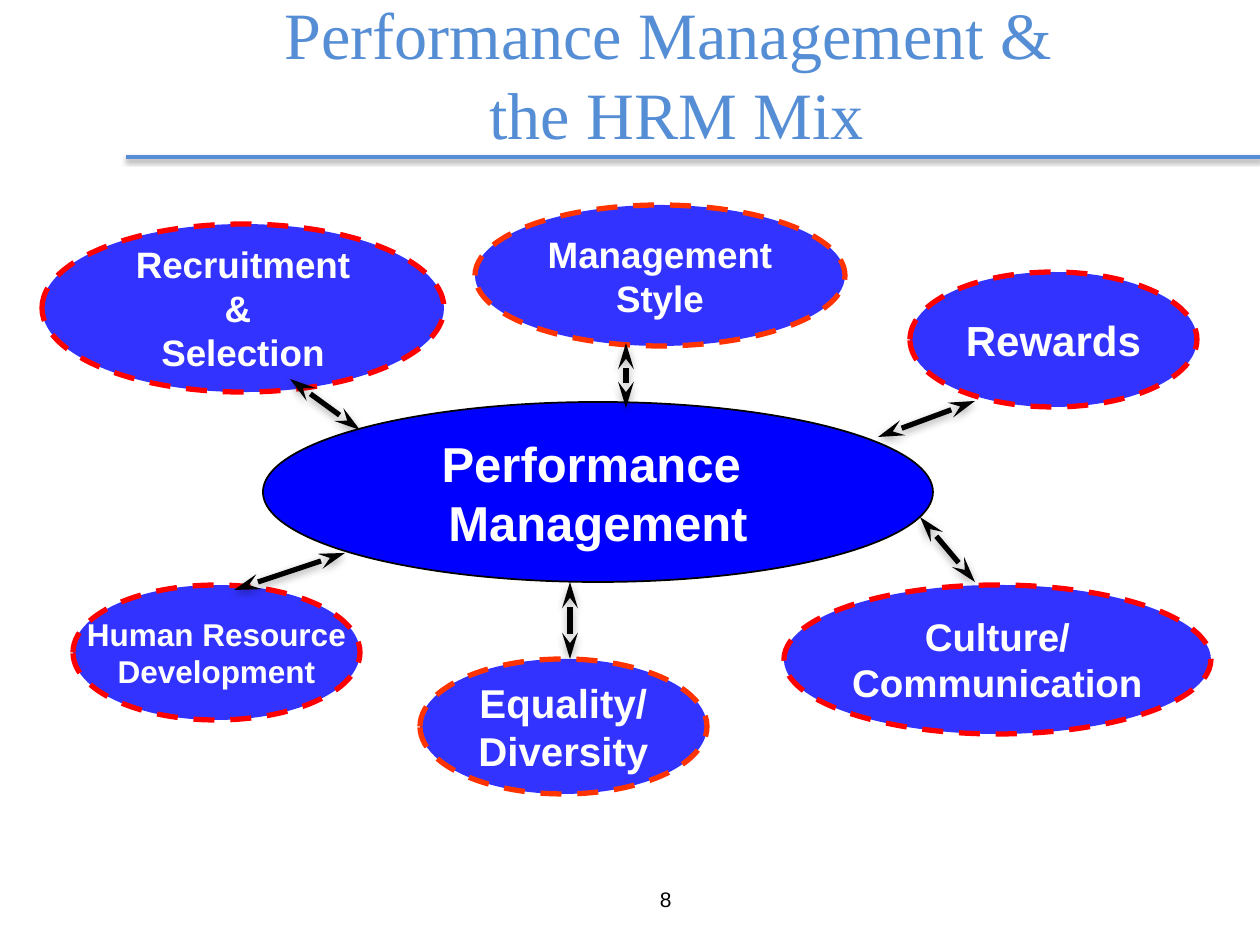
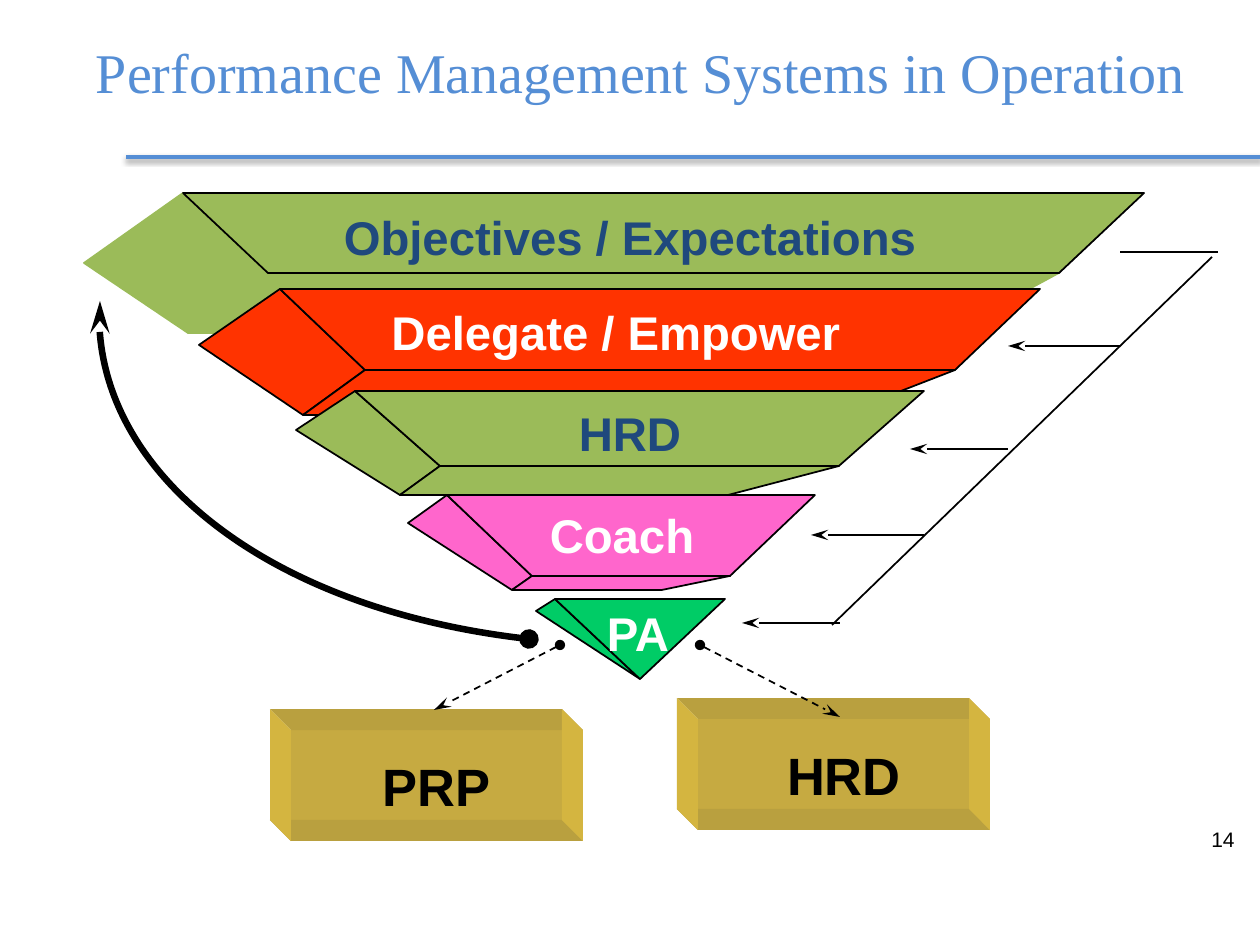
from pptx import Presentation
from pptx.dml.color import RGBColor
from pptx.enum.dml import MSO_LINE_DASH_STYLE as DASH
from pptx.enum.shapes import MSO_CONNECTOR, MSO_SHAPE
from pptx.enum.text import MSO_ANCHOR, PP_ALIGN
from pptx.oxml.ns import qn
from pptx.util import Pt
from lxml.etree import SubElement

SCALE = 914400 / 126
TITLE_BLUE = "558ED5"
BLACK, WHITE, NAVY = "000000", "FFFFFF", "1F497D"
OLIVE, ORANGE, PINK, MINT = "9BBB59", "FF3300", "FF66CC", "00CC66"
RED, BRIGHT_BLUE, SOFT_BLUE = "FF0000", "0000FF", "3333FF"
GOLD_FRONT, GOLD_DARK, GOLD_LIGHT = "C6AA41", "B9A03F", "D4B540"
RULE_SHADOW = (3.1, 1.6, 38)
ARROW_SHADOW = (5, 1.8, 35)
END_LENGTHS = {"stealth": "lg", "oval": "med"}


def px(length):
    """Turn px into EMU."""
    return round(length * SCALE)


def color(hex_code):
    """Turn a hex string into a colour."""
    return RGBColor.from_string(hex_code)


def paint(shape, fill=None, line=None, width=1, dash=None):
    """Set the fill and outline of a shape without shadow."""
    shape.shadow.inherit = False
    if fill:
        shape.fill.solid()
        shape.fill.fore_color.rgb = color(fill)
    else:
        shape.fill.background()
    if line:
        shape.line.color.rgb = color(line)
        shape.line.width = Pt(width)
        if dash:
            shape.line.dash_style = dash
    else:
        shape.line.fill.background()


def write(shape, text, size, ink, bold=True, font="Arial", align=PP_ALIGN.CENTER, wrap=False):
    """Put formatted text in the middle of a shape."""
    frame = shape.text_frame
    frame.text = text
    frame.word_wrap = wrap
    frame.vertical_anchor = MSO_ANCHOR.MIDDLE
    for paragraph in frame.paragraphs:
        paragraph.alignment = align
        for run in paragraph.runs:
            run.font.name = font
            run.font.size = Pt(size)
            run.font.bold = bold
            run.font.color.rgb = color(ink)


def add_text(slide, box, text, size, ink, **style):
    """Add a text box."""
    write(slide.shapes.add_textbox(*map(px, box)), text, size, ink, **style)


def add_ends(shape, head, tail):
    """Add line ends to an outline."""
    outline = shape._element.spPr.find(qn("a:ln"))
    for tag, kind in (("a:headEnd", head), ("a:tailEnd", tail)):
        if kind:
            SubElement(outline, qn(tag), type=kind, w="med", len=END_LENGTHS[kind])


def add_line(slide, start, end, ink=BLACK, width=1, head=None, tail=None, dash=None, shadow=None):
    """Add a straight line with optional ends and shadow."""
    connector = slide.shapes.add_connector(MSO_CONNECTOR.STRAIGHT, *map(px, (*start, *end)))
    connector.line.color.rgb = color(ink)
    connector.line.width = Pt(width)
    if dash:
        connector.line.dash_style = dash
    add_ends(connector, head, tail)
    effects = SubElement(connector._element.spPr, qn("a:effectLst"))
    if shadow:
        blur, distance, opacity = shadow
        outer = SubElement(effects, qn("a:outerShdw"), blurRad=str(Pt(blur)),
                           dist=str(Pt(distance)), dir="5400000", rotWithShape="0")
        shade = SubElement(outer, qn("a:srgbClr"), val=BLACK)
        SubElement(shade, qn("a:alpha"), val=str(opacity * 1000))


def add_outline(slide, left, top, points, close=True):
    """Build a freeform from points relative to left and top."""
    points = [(left + x, top + y) for x, y in points]
    builder = slide.shapes.build_freeform(*points[0], scale=SCALE)
    builder.add_line_segments(points[1:], close=close)
    return builder.convert_to_shape()


def add_frame(slide, title, title_box, title_size, number, number_box):
    """Add the title, the rule under it and the slide number."""
    add_line(slide, (126, 157), (1260, 157), TITLE_BLUE, 2, shadow=RULE_SHADOW)
    add_text(slide, title_box, title, title_size, TITLE_BLUE, bold=False,
             font="Times New Roman", wrap=True)
    add_text(slide, number_box, number, 12, BLACK, bold=False, align=PP_ALIGN.RIGHT, wrap=True)


def add_ellipse(slide, box, text, size, fill, **outline):
    """Add a labelled ellipse."""
    ellipse = slide.shapes.add_shape(MSO_SHAPE.OVAL, *map(px, box))
    paint(ellipse, fill, **outline)
    write(ellipse, text, size, WHITE)


def add_hrm_mix(slide, left, top):
    """Draw the central ellipse, its six neighbours and the arrows."""
    add_ellipse(slide, (left + 223, top + 202, 670, 180), "Performance \nManagement", 28,
                BRIGHT_BLUE, line=BLACK)
    neighbours = [
        (2, 24, 402, 168, "Recruitment\n& \nSelection", 21, RED),
        (744, 385, 427, 149, "Culture/\nCommunication", 22, RED),
        (435, 5, 370, 141, "Management\nStyle", 21, ORANGE),
        (870, 72, 287, 135, "Rewards", 24, RED),
        (33, 385, 287, 135, "Human Resource\nDevelopment", 18, RED),
        (380, 459, 287, 135, "Equality/\nDiversity", 23, ORANGE),
    ]
    for x, y, width, height, text, size, border in neighbours:
        add_ellipse(slide, (left + x, top + y, width, height), text, size, SOFT_BLUE,
                    line=border, width=3, dash=DASH.DASH)
    arrows = [
        (320, 230, 250, 179), (194, 390, 305, 353), (586, 208, 586, 143),
        (935, 201, 838, 237), (935, 382, 880, 317), (530, 382, 530, 459),
    ]
    for x1, y1, x2, y2 in arrows:
        add_line(slide, (left + x1, top + y1), (left + x2, top + y2), width=3,
                 head="stealth", tail="stealth", shadow=ARROW_SHADOW)


def add_tier(slide, left, top, front, tip, foot, fill, edge):
    """Draw one funnel tier: side face, under face and front face."""
    x1, x2, y1, y2 = front
    inset, foot_shift = 85, 104
    foot_right, foot_y = foot
    top_left, top_right = (x1, y1), (x2, y1)
    low_left, low_right = (x1 + inset, y2), (x2 - inset, y2)
    foot_left = (tip[0] + foot_shift, foot_y)
    faces = [([top_left, low_left, foot_left, tip], edge)]
    if foot_right > foot_left[0]:
        faces.append(([low_right, low_left, foot_left, foot], edge))
    faces.append(([top_left, top_right, low_right, low_left], BLACK))
    for points, line in faces:
        paint(add_outline(slide, left, top, points), fill, line)


def add_funnel(slide, left, top):
    """Draw the five tiers and then their labels."""
    tiers = [
        ((99, 1060, 0, 80), (0, 70), (864, 140), OLIVE, OLIVE),
        ((196, 956, 96, 177), (115, 152), (755, 222), ORANGE, BLACK),
        ((271, 840, 198, 273), (212, 237), (644, 302), OLIVE, BLACK),
        ((363, 731, 302, 383), (324, 330), (578, 397), PINK, BLACK),
        ((471, 641, 406, 486), (452, 418), (556, 486), MINT, BLACK),
    ]
    for tier in tiers:
        add_tier(slide, left, top, *tier)
    labels = [
        ("Objectives / Expectations", 546, 44, 660, NAVY),
        ("Delegate / Empower", 532, 139, 540, WHITE),
        ("HRD", 546, 240, 224, NAVY),
        ("Coach", 538, 342, 220, WHITE),
        ("PA", 554, 440, 120, WHITE),
    ]
    height = 60
    for text, center, middle, width, ink in labels:
        box = (left + center - width / 2, top + middle - height / 2, width, height)
        add_text(slide, box, text, 27, ink)


def add_feedback_curve(slide, left, top):
    """Draw the thick curved arrow from the bottom tier back to the top."""
    curve = add_outline(slide, left, top, [(443, 338), (190, 310), (0, 161), (14, 0)], close=False)
    paint(curve, line=BLACK, width=3.75)
    add_ends(curve, "oval", "stealth")
    segments = list(curve._element.iter(qn("a:lnTo")))
    bezier = SubElement(segments[0].getparent(), qn("a:cubicBezTo"))
    for segment in segments:
        bezier.append(segment[0])
        segment.getparent().remove(segment)


def add_cascade(slide, left, top):
    """Draw the slanted line with an arrow to each lower tier."""
    add_line(slide, (left + 470, top + 5), (left + 90, top + 373))
    add_line(slide, (left + 476, top), (left + 378, top))
    for start, end, y in ((378, 266, 94), (266, 168, 197), (182, 69, 283), (98, 0, 371)):
        add_line(slide, (left + start, top + y), (left + end, top + y), tail="stealth")


def add_block(slide, left, top, text):
    """Draw a gold block with four slanted faces and a label."""
    width, height, depth = 292, 111, 21
    front = slide.shapes.add_shape(MSO_SHAPE.RECTANGLE, *map(px, (left, top, width, height)))
    paint(front, GOLD_FRONT)
    write(front, text, 30, BLACK)
    for y in (0, height):
        face = [(0, y), (width, y), (width - depth, y - depth), (-depth, y - depth)]
        paint(add_outline(slide, left, top, face), GOLD_DARK)
    for x in (0, width):
        face = [(x, 0), (x, height), (x - depth, height - depth), (x - depth, -depth)]
        paint(add_outline(slide, left, top, face), GOLD_LIGHT)


def add_outcomes(slide, left, top):
    """Draw the two outcome blocks and the dashed arrows to them."""
    add_block(slide, left + 429, top + 74, "HRD")
    add_block(slide, left + 22, top + 85, "PRP")
    for start, end in (((431, 0), (571, 72)), ((291, 0), (165, 65))):
        add_line(slide, (left + start[0], top + start[1]), (left + end[0], top + end[1]),
                 head="oval", tail="stealth", dash=DASH.DASH)


def main():
    """Build both slides and save them."""
    presentation = Presentation()
    presentation.slide_width, presentation.slide_height = px(1260), px(945)
    blank = presentation.slide_layouts[6]

    mix = presentation.slides.add_slide(blank)
    add_frame(mix, "Performance Management & \vthe HRM Mix", (93, -3, 1167, 152), 37.8,
              "8", (611, 874, 73, 50))
    add_hrm_mix(mix, 40, 200)

    systems = presentation.slides.add_slide(blank)
    add_frame(systems, "Performance Management Systems in Operation", (74, 1, 1134, 140), 32,
              "14", (1188, 814, 59, 50))
    add_funnel(systems, 84, 193)
    add_feedback_curve(systems, 86, 301)
    add_cascade(systems, 742, 252)
    add_outcomes(systems, 269, 645)

    presentation.save("out.pptx")


if __name__ == "__main__":
    main()
